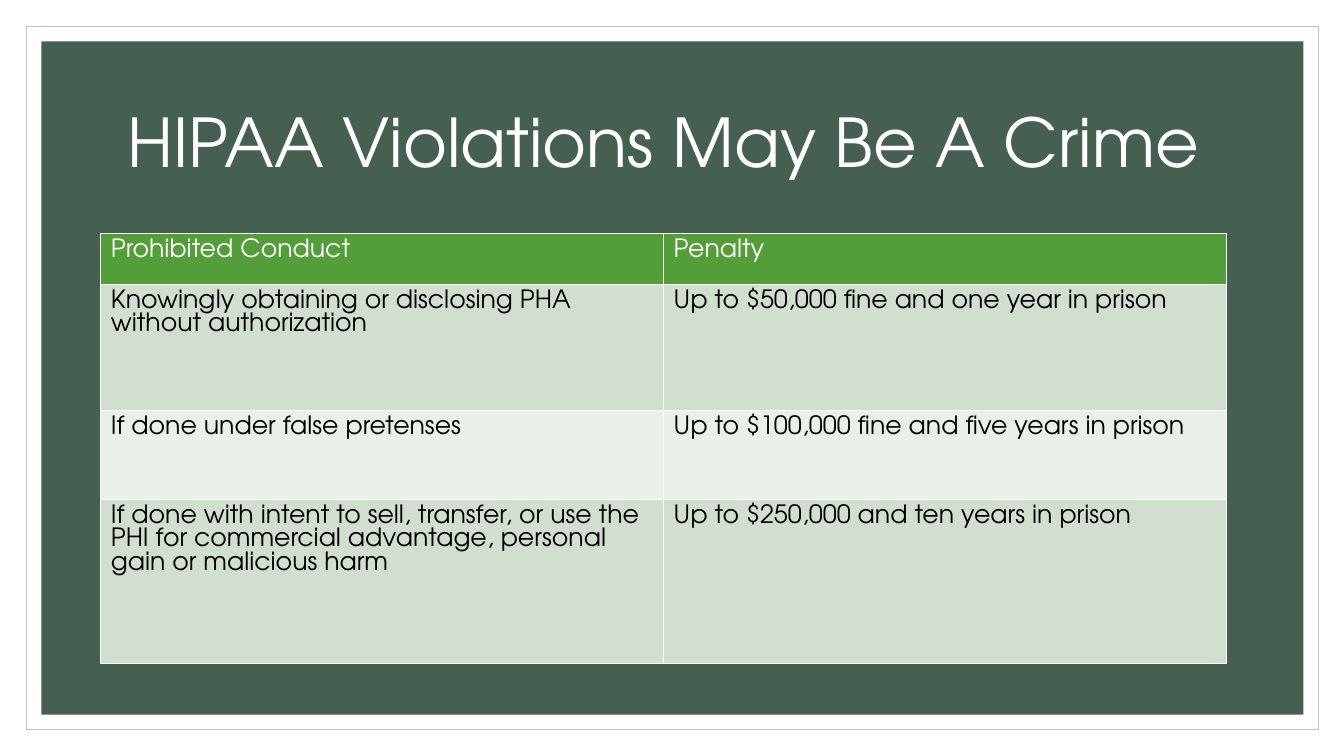
from lxml import etree
from pptx import Presentation
from pptx import util as u
from pptx.dml import color
from pptx.enum import shapes, text
from pptx.oxml import ns

COLORS = {
    "white": "FFFFFF",
    "black": "000000",
    "frame": "BFBFBF",
    "panel": "455F51",
    "header": "549E39",
    "odd": "D1DFCE",
    "even": "E9F0E8",
}
PENALTIES = [
    ("Prohibited Conduct", "Penalty"),
    ("Knowingly obtaining or disclosing PHA without authorization",
     "Up to $50,000 fine and one year in prison"),
    ("If done under false pretenses",
     "Up to $100,000 fine and five years in prison"),
    ("If done with intent to sell, transfer, or use the PHI for commercial "
     "advantage, personal gain or malicious harm",
     "Up to $250,000 and ten years in prison"),
]
ROW_HEIGHTS = [6.1, 15, 10.6, 19.5]


def rgb(name):
    return color.RGBColor.from_string(COLORS[name])


def write(frame, words, size=18, ink="black", font="TeX Gyre Adventor", spacing=None):
    para = frame.paragraphs[0]
    para.alignment = text.PP_ALIGN.LEFT
    if spacing:
        para.line_spacing = spacing
    span = para.add_run()
    span.text = words
    span.font.size = u.Pt(size)
    span.font.name = font
    span.font.color.rgb = rgb(ink)


class SlideBuilder:
    COLUMNS, ROWS = 160, 90

    def __init__(self, deck):
        self.column = deck.slide_width / self.COLUMNS
        self.row = deck.slide_height / self.ROWS
        self.slide = deck.slides.add_slide(deck.slide_layouts[6])

    def place(self, left, top, width, height):
        return (round(left * self.column), round(top * self.row),
                round(width * self.column), round(height * self.row))

    def rectangle(self, area, fill, line=None):
        box = self.slide.shapes.add_shape(
            shapes.MSO_SHAPE.RECTANGLE, *self.place(*area))
        box.shadow.inherit = False
        box.fill.solid()
        box.fill.fore_color.rgb = rgb(fill)
        if line:
            box.line.color.rgb = rgb(line)
            box.line.width = u.Pt(0.5)
        else:
            box.line.fill.background()

    def title(self, area, words):
        box = self.slide.shapes.add_textbox(*self.place(*area))
        box.text_frame.word_wrap = True
        box.text_frame.vertical_anchor = text.MSO_ANCHOR.MIDDLE
        write(box.text_frame, words, size=48, ink="white", spacing=0.9)

    def border(self, cell):
        properties = cell._tc.get_or_add_tcPr()
        for index, side in enumerate(("lnL", "lnR", "lnT", "lnB")):
            line = etree.Element(ns.qn(f"a:{side}"), w=str(u.Pt(1)))
            fill = etree.SubElement(line, ns.qn("a:solidFill"))
            etree.SubElement(fill, ns.qn("a:srgbClr"), val=COLORS["white"])
            properties.insert(index, line)

    def table(self, area, rows, heights):
        grid = self.slide.shapes.add_table(
            len(rows), len(rows[0]), *self.place(*area)).table
        for index, (words, height) in enumerate(zip(rows, heights)):
            grid.rows[index].height = round(height * self.row)
            fill = "header" if index == 0 else ("even", "odd")[index % 2]
            for cell, entry in zip(grid.rows[index].cells, words):
                cell.fill.solid()
                cell.fill.fore_color.rgb = rgb(fill)
                write(cell.text_frame, entry, ink="black" if index else "white")
                self.border(cell)


def main():
    deck = Presentation()
    deck.slide_width, deck.slide_height = u.Inches(13.33), u.Inches(7.5)
    page = SlideBuilder(deck)
    page.rectangle((3.12, 3.12, 153.84, 83.76), "white", line="frame")
    page.rectangle((4.92, 4.92, 150.24, 80.16), "panel")
    page.title((14, 8.4, 132, 18), "HIPAA Violations May Be A Crime")
    page.table((12, 27.8, 134, sum(ROW_HEIGHTS)), PENALTIES, ROW_HEIGHTS)
    deck.save("out.pptx")


if __name__ == "__main__":
    main()
